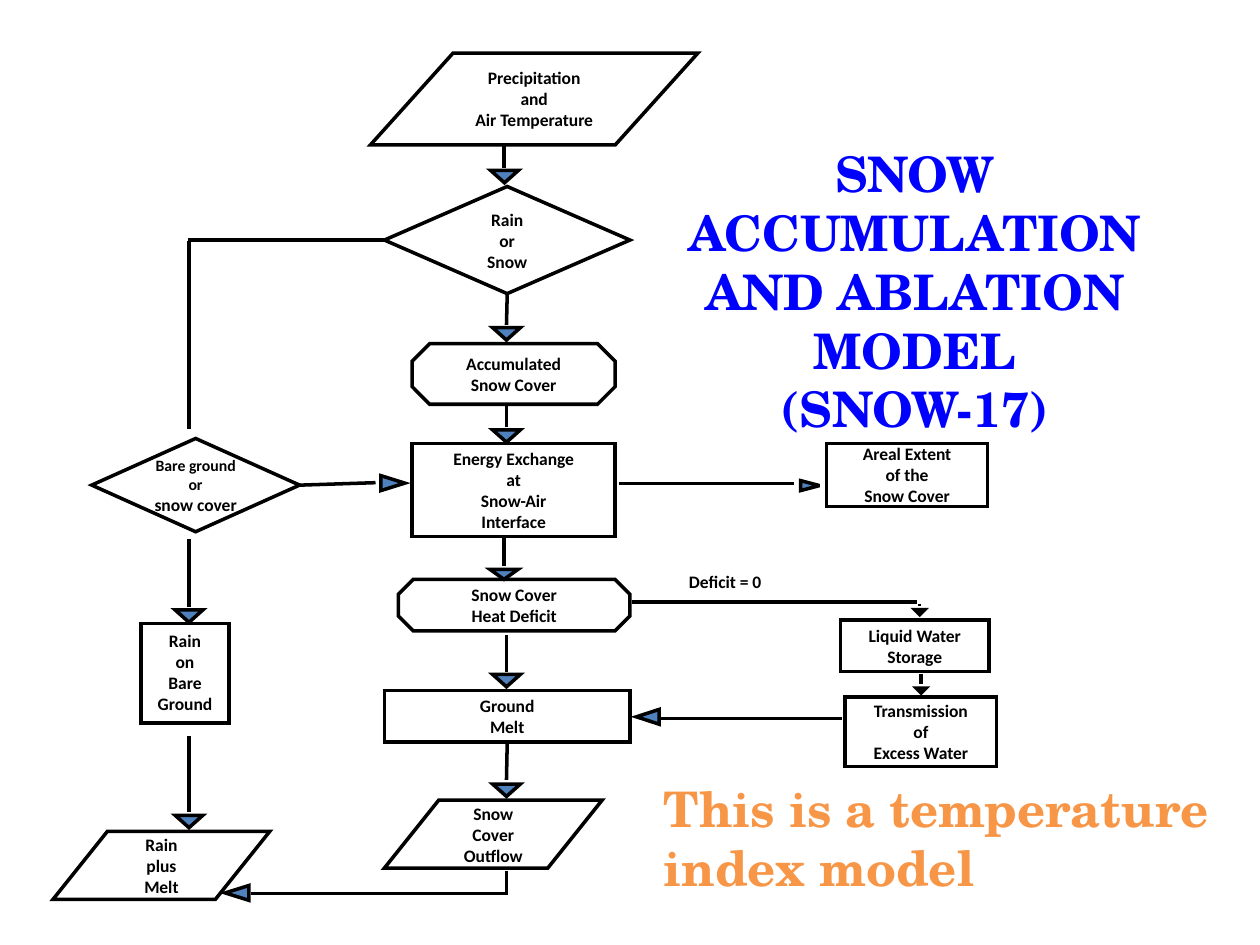
from dataclasses import dataclass

from lxml import etree
from pptx import Presentation
from pptx import util as u
from pptx.dml.color import RGBColor
from pptx.enum import shapes, text
from pptx.oxml import ns


@dataclass(frozen=True)
class Theme:
    ink: RGBColor = RGBColor(0, 0, 0)
    arrow: RGBColor = RGBColor(0x4F, 0x81, 0xBD)
    title: RGBColor = RGBColor(0, 0, 0xFF)
    note: RGBColor = RGBColor(0xF7, 0x96, 0x46)
    body_font: str = "Calibri"
    display_font: str = "TeX Gyre Schola"
    small: u.Pt = u.Pt(9)
    body: u.Pt = u.Pt(10)
    display: u.Pt = u.Pt(28)
    stroke: u.Pt = u.Pt(2)


theme = Theme()
presentation = Presentation()
presentation.slide_width, presentation.slide_height = u.Cm(25.4), u.Cm(19.05)
slide = presentation.slides.add_slide(presentation.slide_layouts[6])
Preset = shapes.MSO_SHAPE
Align = text.PP_ALIGN


def write(shape, lines, font, size, color, align):
    for index, line in enumerate(lines):
        frame = shape.text_frame
        paragraph = frame.paragraphs[0] if index == 0 else frame.add_paragraph()
        paragraph.text = line
        paragraph.alignment = align
        paragraph.font.name, paragraph.font.size = font, size
        paragraph.font.bold = True
        paragraph.font.color.rgb = color


def add_outlined(preset, left, top, width, height):
    """Add a black-edged, sharp-cornered shape without fill or shadow."""
    shape = slide.shapes.add_shape(
        preset, u.Cm(left), u.Cm(top), u.Cm(width), u.Cm(height))
    shape.shadow.inherit = False
    shape.fill.background()
    shape.line.color.rgb = theme.ink
    shape.line.width = theme.stroke
    outline = shape._element.spPr.find(ns.qn("a:ln"))
    etree.SubElement(outline, ns.qn("a:miter")).set("lim", "800000")
    return shape


# Flowchart boxes: name, preset, adjustment, left, top, width, height, lines
boxes = [
    ("input", Preset.PARALLELOGRAM, 0.9, 7.47, 1.07, 6.6, 1.85,
     ["Precipitation", "and", "Air Temperature"]),
    ("rain or snow", Preset.DIAMOND, None, 7.75, 3.76, 4.95, 2.16,
     ["Rain", "or", "Snow"]),
    ("accumulated", Preset.OCTAGON, 0.29, 8.31, 6.93, 4.09, 1.22,
     ["Accumulated", "Snow Cover"]),
    ("energy", Preset.RECTANGLE, None, 8.31, 8.94, 4.09, 1.88,
     ["Energy Exchange", "at", "Snow-Air", "Interface"]),
    ("heat deficit", Preset.OCTAGON, 0.29, 8.03, 11.68, 4.67, 1.04,
     ["Snow Cover", "Heat Deficit"]),
    ("ground melt", Preset.RECTANGLE, None, 7.75, 13.92, 4.95, 1.04,
     ["Ground", "Melt"]),
    ("outflow", Preset.PARALLELOGRAM, 0.8, 7.75, 16.13, 4.39, 1.37,
     ["Snow", "Cover", "Outflow"]),
    ("rain plus melt", Preset.PARALLELOGRAM, 0.8, 1.07, 16.76, 4.37, 1.37,
     ["Rain", "plus", "Melt"]),
    ("areal extent", Preset.RECTANGLE, None, 16.66, 8.94, 3.25, 1.27,
     ["Areal Extent", "of the", "Snow Cover"]),
    ("liquid water", Preset.RECTANGLE, None, 16.94, 12.5, 3, 1.04,
     ["Liquid Water", "Storage"]),
    ("transmission", Preset.RECTANGLE, None, 17.04, 14.05, 3.05, 1.4,
     ["Transmission", "of", "Excess Water"]),
    ("bare ground", Preset.DIAMOND, None, 1.85, 8.84, 4.19, 1.88,
     ["Bare ground", "or", "snow cover"]),
    ("rain on ground", Preset.RECTANGLE, None, 2.84, 12.57, 1.78, 2.01,
     ["Rain", "on", "Bare", "Ground"]),
]
box_by_name = {}
for name, preset, adjustment, left, top, width, height, lines in boxes:
    box = add_outlined(preset, left, top, width, height)
    if adjustment is not None:
        box.adjustments[0] = adjustment
    box.text_frame.word_wrap = False
    box.text_frame.vertical_anchor = text.MSO_ANCHOR.MIDDLE
    write(box, lines, theme.body_font, theme.body, theme.ink, Align.CENTER)
    box_by_name[name] = box
box_by_name["rain on ground"].text_frame.vertical_anchor = text.MSO_ANCHOR.TOP
for paragraph in box_by_name["bare ground"].text_frame.paragraphs[:2]:
    paragraph.font.size = theme.small

# Flow lines: start x, y, end x, y, and the box side the line starts from
center_x, left_x = 10.21, 3.81
flow_lines = [
    (10.16, 2.95, 10.16, 3.38, None),
    (center_x, 5.92, center_x, 6.55, ("rain or snow", 2)),
    (center_x, 8.18, center_x, 8.61, None),
    (10.16, 10.82, 10.16, 11.4, None),
    (center_x, 12.8, center_x, 13.54, None),
    (center_x, 14.96, center_x, 15.72, ("ground melt", 2)),
    (center_x, 17.55, center_x, 18.01, None),
    (10.24, 18.01, 5.05, 18.01, None),
    (7.75, 4.84, 3.78, 4.84, ("rain or snow", 1)),
    (left_x, 4.85, left_x, 8.64, None),
    (left_x, 10.87, left_x, 12.24, None),
    (left_x, 14.83, left_x, 16.36, None),
    (6.04, 9.78, 7.57, 9.73, ("bare ground", 3)),
    (12.47, 9.75, 16, 9.75, None),
    (12.75, 12.14, 18.49, 12.14, None),
    (18.54, 12.17, 18.54, 12.22, None),
    (18.57, 13.59, 18.57, 13.79, None),
    (16.97, 14.48, 13.31, 14.48, None),
]
for start_x, start_y, end_x, end_y, source in flow_lines:
    line = slide.shapes.add_connector(
        shapes.MSO_CONNECTOR.STRAIGHT,
        u.Cm(start_x), u.Cm(start_y), u.Cm(end_x), u.Cm(end_y))
    line.line.color.rgb = theme.ink
    line.line.width = theme.stroke
    etree.SubElement(line._element.spPr, ns.qn("a:effectLst"))
    if source:
        name, side = source
        line.begin_connect(box_by_name[name], side)

# Arrowhead triangles: centre x, centre y, width, height, rotation
arrowheads = [
    (10.17, 3.56, 0.56, 0.25, 180),
    (center_x, 6.73, 0.56, 0.25, 180),
    (center_x, 8.79, 0.56, 0.25, 180),
    (10.16, 11.58, 0.56, 0.2, 180),
    (center_x, 13.72, 0.56, 0.25, 180),
    (center_x, 15.93, 0.56, 0.25, 180),
    (left_x, 12.42, 0.56, 0.25, 180),
    (left_x, 16.56, 0.56, 0.25, 180),
    (18.54, 12.34, 0.2, 0.1, 180),
    (18.57, 13.92, 0.2, 0.1, 180),
    (7.92, 9.74, 0.3, 0.48, 90),
    (16.33, 9.79, 0.2, 0.38, 90),
    (4.78, 18, 0.3, 0.48, 270),
    (13.06, 14.45, 0.3, 0.46, 270),
]
for x, y, width, height, rotation in arrowheads:
    arrowhead = add_outlined(
        Preset.ISOSCELES_TRIANGLE, x - width / 2, y - height / 2, width, height)
    arrowhead.rotation = rotation
    arrowhead.fill.solid()
    arrowhead.fill.fore_color.rgb = theme.arrow

# Free text: left, top, width, height, lines, font, size, colour, alignment
labels = [
    (13.36, 2.77, 10.16, 5,
     ["SNOW ACCUMULATION", "AND ABLATION MODEL (SNOW-17)"],
     theme.display_font, theme.display, theme.title, Align.CENTER),
    (13.13, 15.57, 11.63, 2.64, ["This is a temperature index model"],
     theme.display_font, theme.display, theme.note, Align.LEFT),
    (13.64, 11.38, 2.11, 0.66, ["Deficit = 0"],
     theme.body_font, theme.body, theme.ink, Align.LEFT),
]
for left, top, width, height, *content in labels:
    label = slide.shapes.add_textbox(
        u.Cm(left), u.Cm(top), u.Cm(width), u.Cm(height))
    label.text_frame.word_wrap = True
    write(label, *content)

presentation.save("out.pptx")
